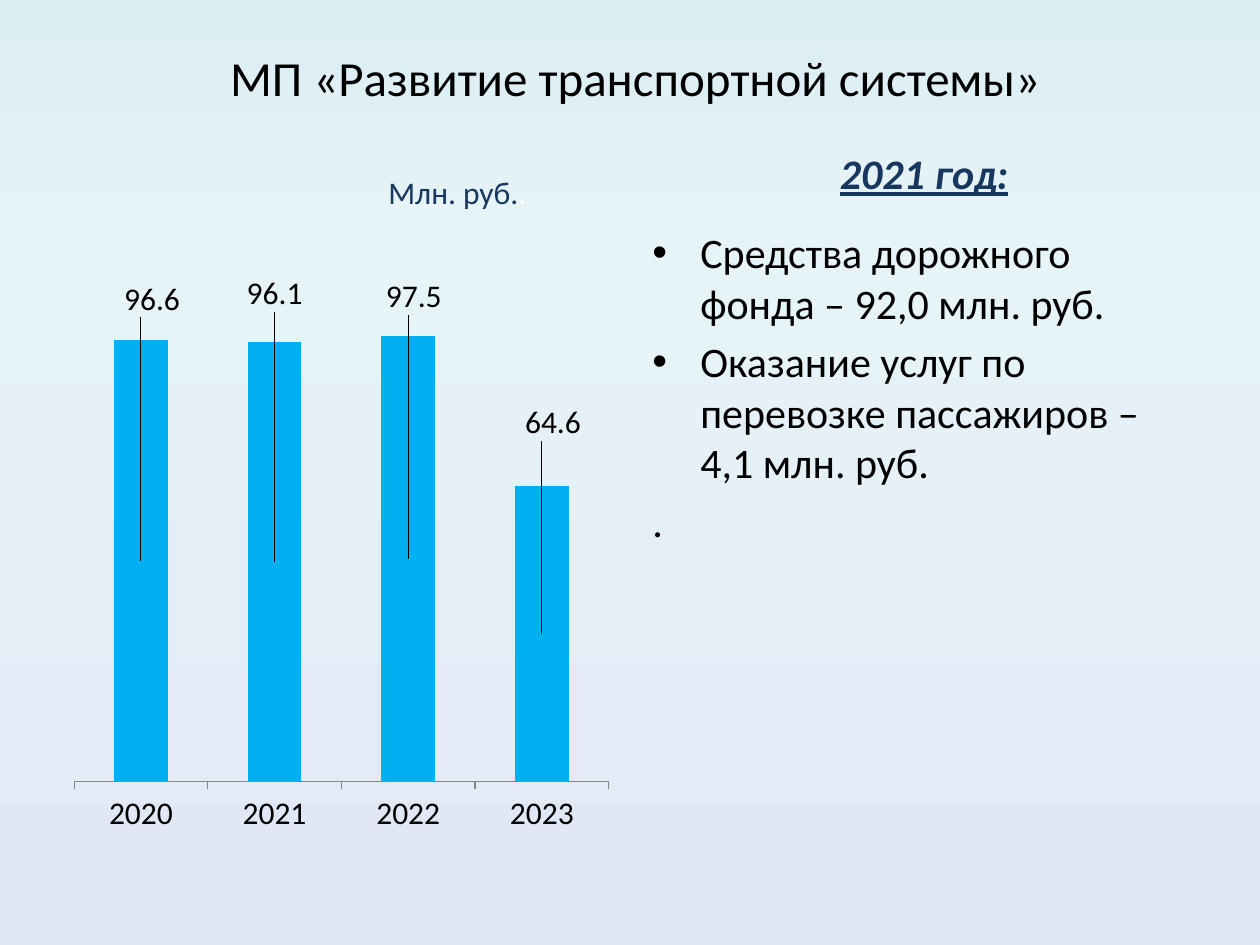
import pptx
import pptx.chart.data
import pptx.dml.color
import pptx.enum.chart
import pptx.enum.text
import pptx.oxml
import pptx.oxml.ns
import pptx.util
from pptx.util import Inches

RGBColor = pptx.dml.color.RGBColor
BLACK = RGBColor(0x00, 0x00, 0x00)
NAVY = RGBColor(0x17, 0x37, 0x5E)
WHITE = RGBColor(0xFF, 0xFF, 0xFF)
BAR_BLUE = RGBColor(0x00, 0xB0, 0xF0)
AXIS_GRAY = RGBColor(0x86, 0x86, 0x86)
BACKGROUND_STOPS = [
    (0, RGBColor(0xDB, 0xEE, 0xF4)),
    (25, RGBColor(0xE6, 0xF3, 0xF7)),
    (100, RGBColor(0xE1, 0xE8, 0xF5)),
]
FONT = "Calibri"
ALIGN = pptx.enum.text.PP_ALIGN
ANCHOR = pptx.enum.text.MSO_ANCHOR

# Content
TITLE = "МП «Развитие транспортной системы»"
YEAR_HEADING = "2021 год:"
UNIT = "Млн. руб."
BULLETS = [
    "Средства дорожного фонда – 92,0 млн. руб.",
    "Оказание услуг по перевозке пассажиров – 4,1 млн. руб.",
]
CLOSING = "."
# Year, value, label shift as a share of the chart's width and height
SPENDING = [
    ("2020", 96.6, 0.02, -0.42),
    ("2021", 96.1, 0, -0.43),
    ("2022", 97.5, 0.01, -0.42),
    ("2023", 64.6, 0.02, -0.34),
]


def parse_xml(tag, inner, prefix):
    namespace = pptx.oxml.ns.nsdecls(prefix)
    return pptx.oxml.parse_xml(f"<{prefix}:{tag} {namespace}>{inner}</{prefix}:{tag}>")


def manual_layout(**values):
    inner = "".join(f'<c:{name} val="{value}"/>' for name, value in values.items())
    return parse_xml("layout", f"<c:manualLayout>{inner}</c:manualLayout>", "c")


def add_span(para, text, size=24, color=BLACK, emphasis=False):
    span = para.add_run()
    span.text = text
    font = span.font
    font.name, font.size = FONT, pptx.util.Pt(size)
    font.color.rgb = color
    if emphasis:
        font.bold = font.italic = font.underline = True


def add_box(page, place, anchor=ANCHOR.MIDDLE, align=ALIGN.CENTER):
    box = page.shapes.add_textbox(*(Inches(length) for length in place))
    frame = box.text_frame
    frame.word_wrap = True
    frame.vertical_anchor = anchor
    frame.paragraphs[0].alignment = align
    return frame


def add_text(page, place, text, **style):
    para = add_box(page, place).paragraphs[0]
    add_span(para, text, **style)
    return para


def paint_background(page):
    page.background.fill.gradient()
    gradient = page._element.find(".//" + pptx.oxml.ns.qn("a:gradFill"))
    stops = "".join(
        f'<a:gs pos="{share * 1000}"><a:srgbClr val="{color}"/></a:gs>'
        for share, color in BACKGROUND_STOPS
    )
    filled = parse_xml(
        "gradFill", f'<a:gsLst>{stops}</a:gsLst><a:lin ang="5400000" scaled="0"/>', "a")
    gradient.getparent().replace(gradient, filled)


def add_spending_chart(page, place):
    data = pptx.chart.data.CategoryChartData()
    data.categories = [row[0] for row in SPENDING]
    data.add_series("Series 1", [row[1] for row in SPENDING])
    chart = page.shapes.add_chart(
        pptx.enum.chart.XL_CHART_TYPE.COLUMN_STACKED,
        *(Inches(length) for length in place), data).chart
    chart.has_legend = chart.has_title = False
    chart.font.name, chart.font.size = FONT, pptx.util.Pt(18)
    chart.font.color.rgb = BLACK

    # Axes
    values = chart.value_axis
    values.visible = values.has_major_gridlines = False
    values.minimum_scale, values.maximum_scale = 0, 120
    years = chart.category_axis
    years.has_major_gridlines = False
    years.major_tick_mark = pptx.enum.chart.XL_TICK_MARK.OUTSIDE
    years.format.line.color.rgb = AXIS_GRAY

    # Bars
    plot = chart.plots[0]
    plot.vary_by_categories = False
    plot.gap_width, plot.overlap = 150, 100
    series = plot.series[0]
    series.format.fill.solid()
    series.format.fill.fore_color.rgb = BAR_BLUE

    # Labels lifted above the bars
    series.data_labels.show_value = True
    for index, (_, _, across, down) in enumerate(SPENDING):
        font = series.points[index].data_label.font
        font.name, font.size = FONT, pptx.util.Pt(18)
        font.color.rgb = BLACK
    for label, row in zip(series._element.xpath("c:dLbls/c:dLbl"), SPENDING):
        label.insert(1, manual_layout(x=row[2], y=row[3]))

    # Plot area
    area = chart._chartSpace.xpath("c:chart/c:plotArea")[0]
    for old in area.xpath("c:layout"):
        area.remove(old)
    area.insert(0, manual_layout(
        layoutTarget="inner", xMode="edge", yMode="edge", x=0.02, y=0.02, w=0.96, h=0.88))


def add_bullets(page, place):
    frame = add_box(page, place, anchor=ANCHOR.TOP, align=ALIGN.LEFT)
    for index, text in enumerate(BULLETS + [CLOSING]):
        para = frame.paragraphs[0] if index == 0 else frame.add_paragraph()
        para.space_before = pptx.util.Pt(4.8)
        add_span(para, text)
        if text in BULLETS:
            properties = para._p.get_or_add_pPr()
            properties.set("marL", str(Inches(0.38)))
            properties.set("indent", str(-Inches(0.38)))
            properties.append(parse_xml("buFont", "", "a"))
            properties[-1].set("typeface", "Arial")
            properties.append(parse_xml("buChar", "", "a"))
            properties[-1].set("char", "•")


def main():
    deck = pptx.Presentation()
    deck.slide_width, deck.slide_height = Inches(10), Inches(7.5)
    page = deck.slides.add_slide(deck.slide_layouts[6])
    paint_background(page)
    add_text(page, (0.25, 0.3, 9.58, 0.62), TITLE, size=28)
    add_spending_chart(page, (0.5, 1.75, 4.42, 4.95))
    add_bullets(page, (5.08, 1.75, 4.42, 4.95))
    add_text(page, (6.5, 1.08, 1.67, 0.58), YEAR_HEADING, color=NAVY, emphasis=True)
    unit = add_text(page, (2.92, 1.38, 1.42, 0.29), UNIT, size=18, color=NAVY)
    add_span(unit, ".", size=18, color=WHITE)
    deck.save("out.pptx")


if __name__ == "__main__":
    main()
